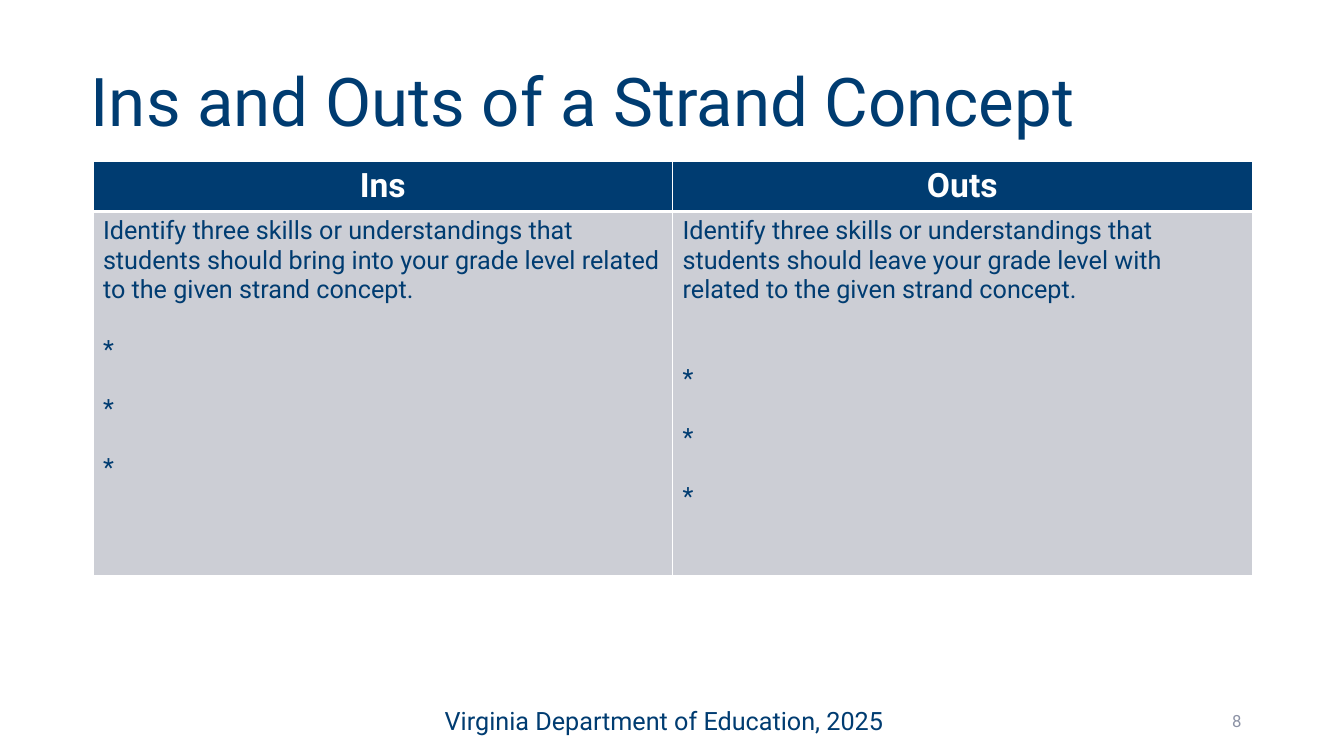
from lxml import etree
from pptx import Presentation
from pptx.dml.color import RGBColor
from pptx.enum import text
from pptx.oxml import ns
from pptx.util import Pt

NAVY = RGBColor(0x00, 0x3C, 0x71)
WHITE = RGBColor(0xFF, 0xFF, 0xFF)
PALE = RGBColor(0xCC, 0xCE, 0xD5)
GRAY = RGBColor(0x8C, 0x92, 0xA5)
LEFT, CENTER, RIGHT = text.PP_ALIGN.LEFT, text.PP_ALIGN.CENTER, text.PP_ALIGN.RIGHT
TOP, MIDDLE, BOTTOM = text.MSO_ANCHOR.TOP, text.MSO_ANCHOR.MIDDLE, text.MSO_ANCHOR.BOTTOM


def write(para, words, size, color, align=LEFT, bold=False):
    para.alignment = align
    span = para.add_run()
    span.text = words
    span.font.name = "Roboto"
    span.font.size = Pt(size)
    span.font.bold = bold
    span.font.color.rgb = color


def set_borders(cell, widths):
    properties = cell._tc.get_or_add_tcPr()
    for position, (side, width) in enumerate(widths.items()):
        line = etree.Element(ns.qn(f"a:ln{side}"), w=str(Pt(width)))
        fill = etree.SubElement(line, ns.qn("a:solidFill"))
        etree.SubElement(fill, ns.qn("a:srgbClr"), val=str(WHITE))
        properties.insert(position, line)


deck = Presentation()
deck.slide_width = Pt(960)
deck.slide_height = Pt(540)
page = deck.slides.add_slide(deck.slide_layouts[6])

labels = [
    ("Ins and Outs of a Strand Concept", (0, 0, 960, 104.4), 48, NAVY, LEFT, BOTTOM, 64.8, 0.9),
    ("8", (678, 500.4, 216, 28.8), 12, GRAY, RIGHT, MIDDLE, 7.2, 1),
    ("Virginia Department of Education, 2025", (310.5, 500.4, 339, 28.8), 18, NAVY, LEFT, TOP, 7.2, 1),
]
for words, place, size, color, align, anchor, inset, spacing in labels:
    box = page.shapes.add_textbox(*map(Pt, place))
    frame = box.text_frame
    frame.word_wrap = True
    frame.vertical_anchor = anchor
    frame.margin_left = Pt(inset)
    frame.paragraphs[0].line_spacing = spacing
    write(frame.paragraphs[0], words, size, color, align)

columns = [
    ("Ins", "Identify three skills or understandings that students should bring into "
            "your grade level related to the given strand concept.", 21.1),
    ("Outs", "Identify three skills or understandings that students should leave "
             "your grade level with related to the given strand concept.", 42.2),
]
table = page.shapes.add_table(2, 2, Pt(66.4), Pt(115), Pt(828), Pt(295.4)).table
table.rows[0].height = Pt(35.2)
table.rows[1].height = Pt(260.2)

for index, (heading, prompt, first_gap) in enumerate(columns):
    table.columns[index].width = Pt(414)
    header, body = table.cell(0, index), table.cell(1, index)
    for cell, color, top, bottom in ((header, NAVY, 1, 3), (body, PALE, 3, 1)):
        cell.fill.solid()
        cell.fill.fore_color.rgb = color
        set_borders(cell, {"L": 1, "R": 1, "T": top, "B": bottom})
    write(header.text_frame.paragraphs[0], heading, 24, WHITE, CENTER, True)
    write(body.text_frame.paragraphs[0], prompt, 18, NAVY)
    for gap in (first_gap, 21.1, 21.1):
        para = body.text_frame.add_paragraph()
        para.space_before = Pt(gap)
        write(para, "*", 18, NAVY)

deck.save("out.pptx")
